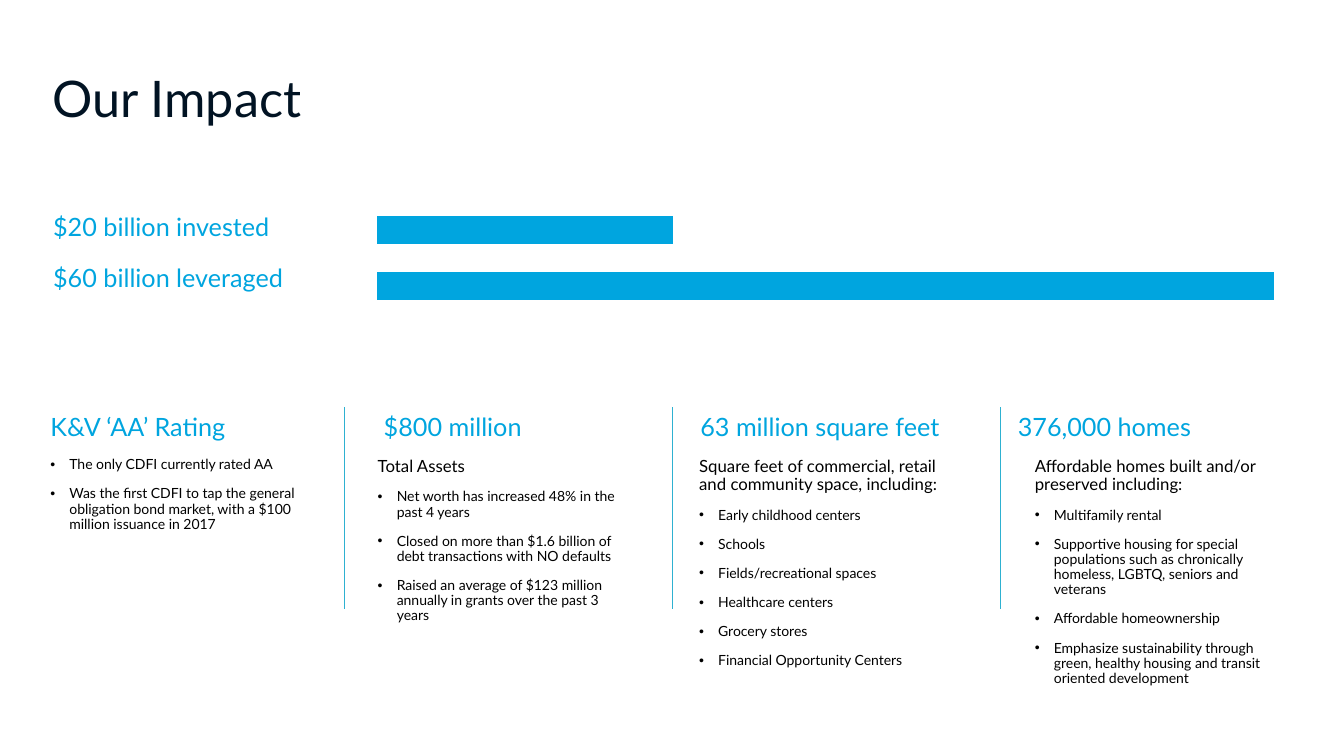
from lxml import etree
from pptx import Presentation
from pptx.chart.data import CategoryChartData
from pptx.dml.color import RGBColor
from pptx.enum.chart import XL_CHART_TYPE as ChartType
from pptx.enum.shapes import MSO_CONNECTOR as Connector
from pptx.enum.text import MSO_ANCHOR as Anchor, MSO_AUTO_SIZE as AutoSize, PP_ALIGN as Align
from pptx.oxml import parse_xml
from pptx.oxml.ns import nsdecls, qn
from pptx.util import Cm, Pt

# Content
TITLE = "Our Impact"
AMOUNTS = ["$20 billion invested", "$60 billion leveraged"]
BARS = [("Series 1", 100), ("Series 2", 33), ("Series 3", None)]
# heading, heading left, body left, lead line, bullets
COLUMNS = [
    ("K&V ‘AA’ Rating", 1.02, 1.02, None, [
        "The only CDFI currently rated AA",
        "Was the first CDFI to tap the general obligation bond market, "
        "with a $100 million issuance in 2017"]),
    ("$800 million", 9.42, 9.27, "Total Assets", [
        "Net worth has increased 48% in the past 4 years",
        "Closed on more than $1.6 billion of debt transactions with NO defaults",
        "Raised an average of $123 million annually in grants over the past 3 years"]),
    ("63 million square feet", 17.4, 17.37,
     "Square feet of commercial, retail and community space, including:", [
         "Early childhood centers", "Schools", "Fields/recreational spaces",
         "Healthcare centers", "Grocery stores", "Financial Opportunity Centers"]),
    ("376,000 homes", 25.4, 25.83,
     "Affordable homes built and/or preserved including:", [
         "Multifamily rental",
         "Supportive housing for special populations such as chronically "
         "homeless, LGBTQ, seniors and veterans",
         "Affordable homeownership",
         "Emphasize sustainability through green, healthy housing and "
         "transit oriented development"]),
]

# Style
NAVY = RGBColor(0x01, 0x13, 0x23)
BLUE = RGBColor(0x00, 0xA5, 0xDF)
TEAL = RGBColor(0x2E, 0xB1, 0xD1)
GREY = RGBColor(0xA5, 0xA5, 0xA5)
BLACK = RGBColor(0, 0, 0)
FONT = "Lato"
COLUMN_WIDTH = 6.91
HEADING_TOP, HEADING_HEIGHT = 10.19, 1.22
BODY_HEIGHT = 6.3
RULE_LEFT, RULE_PITCH, RULE_TOP, RULE_BOTTOM = 8.69, 8.26, 10.26, 15.34


def place(shape, left, top, width, height):
    box = {"left": left, "top": top, "width": width, "height": height}
    for side, length in box.items():
        setattr(shape, side, Cm(length))


def write(frame, lines, anchor=Anchor.TOP, space=10):
    """Fill a text frame with (text, size, colour, bulleted) lines."""
    frame.word_wrap = True
    frame.auto_size = AutoSize.NONE
    frame.vertical_anchor = anchor
    for number, (text, size, colour, bulleted) in enumerate(lines):
        line = frame.add_paragraph() if number else frame.paragraphs[0]
        layout = {"alignment": Align.LEFT, "line_spacing": 0.9, "space_before": Pt(space)}
        for name, value in layout.items():
            setattr(line, name, value)
        run = line.add_run()
        run.text = text
        for name, value in {"name": FONT, "size": Pt(size)}.items():
            setattr(run.font, name, value)
        run.font.color.rgb = colour
        if bulleted:
            props = line._p.get_or_add_pPr()
            props.set("marL", str(Cm(0.48)))
            props.set("indent", str(-Cm(0.48)))
            etree.SubElement(props, qn("a:buFont")).set("typeface", "Arial")
            etree.SubElement(props, qn("a:buChar")).set("char", "•")


def add_text(left, top, width, height, lines, anchor=Anchor.TOP):
    box = slide.shapes.add_textbox(Cm(left), Cm(top), Cm(width), Cm(height))
    write(box.text_frame, lines, anchor)


deck = Presentation()
deck.slide_width, deck.slide_height = Cm(33.87), Cm(19.05)
slide = deck.slides.add_slide(deck.slide_layouts[5])

# Title
title = slide.shapes.title
place(title, 1.07, 1.27, 31.75, 2.54)
write(title.text_frame, [(TITLE, 36, NAVY, False)], Anchor.MIDDLE, space=0)

# Amounts beside the bars
for row, amount in enumerate(AMOUNTS):
    add_text(1.09, 5.11 + row * 1.29, 6.99, 1.27, [(amount, 18, BLUE, False)], Anchor.MIDDLE)

# Bar chart
bar_data = CategoryChartData()
bar_data.categories = ["1"]
for name, value in BARS:
    bar_data.add_series(name, [value])
chart = slide.shapes.add_chart(ChartType.BAR_CLUSTERED, Cm(8.99), Cm(3.58),
                               Cm(25.12), Cm(4.47), bar_data).chart
chart.has_legend = chart.has_title = False
for name, value in {"name": "Calibri", "size": Pt(10)}.items():
    setattr(chart.font, name, value)
chart.font.color.rgb = BLACK
for axis in (chart.category_axis, chart.value_axis):
    axis.visible = axis.has_major_gridlines = False
chart.value_axis.minimum_scale, chart.value_axis.maximum_scale = 0, 100
plot = chart.plots[0]
for name, value in {"gap_width": 114, "overlap": -100, "vary_by_categories": False}.items():
    setattr(plot, name, value)
for series, colour in zip(plot.series, (BLUE, BLUE, GREY)):
    series.format.fill.solid()
    series.format.fill.fore_color.rgb = colour

# Fixed plot area, as fractions of the chart
plot_area = chart._chartSpace.chart.plotArea
for old_layout in plot_area.findall(qn("c:layout")):
    plot_area.remove(old_layout)
settings = {"layoutTarget": "inner", "xMode": "edge", "yMode": "edge",
            "x": 0.02, "y": 0.01, "w": 0.9, "h": 0.97}
items = "".join(f'<c:{tag} val="{value}"/>' for tag, value in settings.items())
plot_area.insert(0, parse_xml(
    f'<c:layout {nsdecls("c")}><c:manualLayout>{items}</c:manualLayout></c:layout>'))

# Columns
for heading, heading_left, body_left, lead, bullets in COLUMNS:
    add_text(heading_left, HEADING_TOP, COLUMN_WIDTH, HEADING_HEIGHT,
             [(heading, 18, BLUE, False)], Anchor.MIDDLE)
    lines = [(lead, 12, BLACK, False)] if lead else []
    lines += [(bullet, 10, BLACK, True) for bullet in bullets]
    add_text(body_left, HEADING_TOP + HEADING_HEIGHT, COLUMN_WIDTH, BODY_HEIGHT, lines)

# Rules between the columns
for gap in range(len(COLUMNS) - 1):
    x = Cm(RULE_LEFT + gap * RULE_PITCH)
    rule = slide.shapes.add_connector(Connector.STRAIGHT, x, Cm(RULE_TOP), x, Cm(RULE_BOTTOM))
    rule.line.color.rgb = TEAL
    rule.line.width = Pt(0.5)
    etree.SubElement(rule._element.spPr, qn("a:effectLst"))

deck.save("out.pptx")
